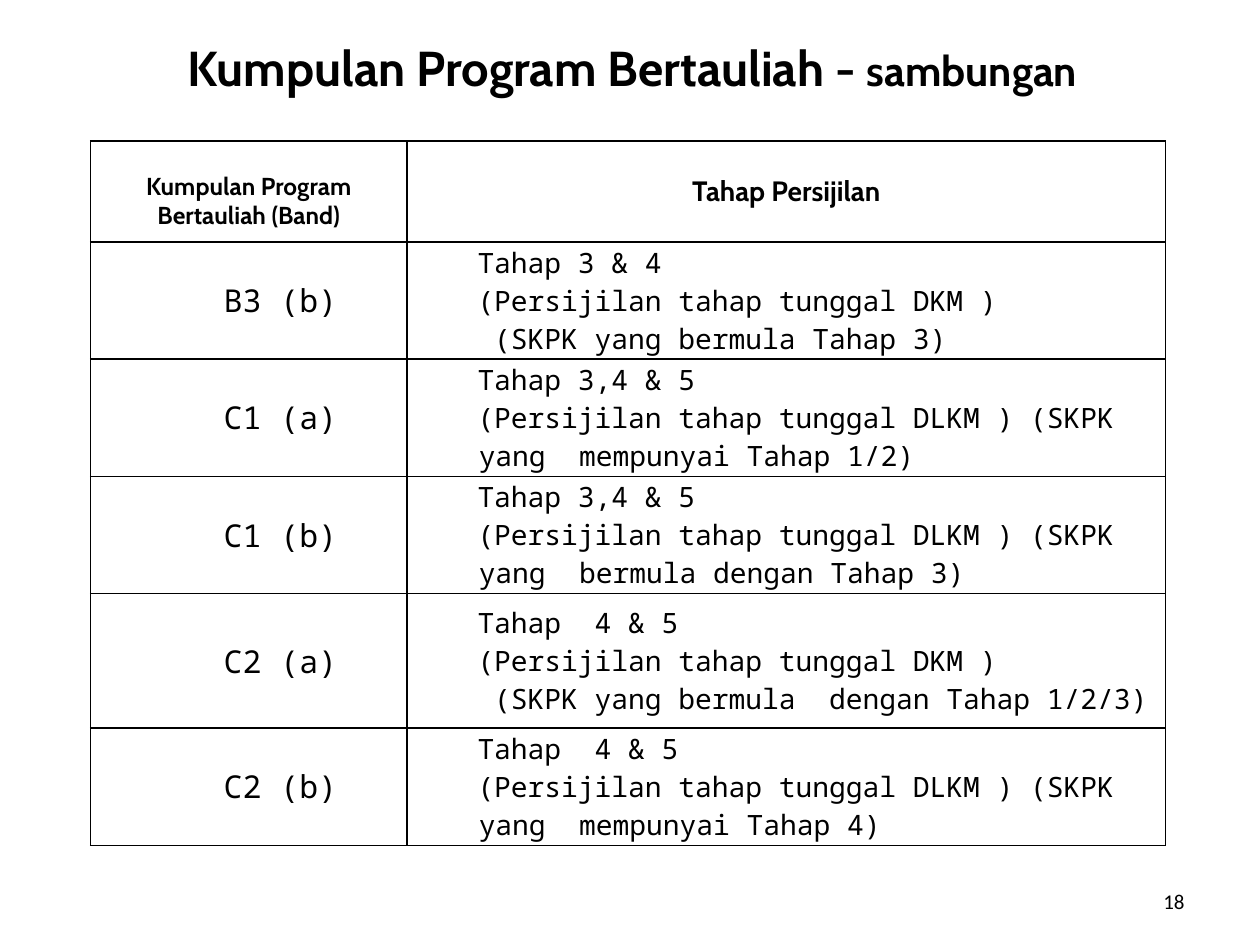
from lxml import etree
from pptx import Presentation
from pptx.dml.color import RGBColor
from pptx.enum.text import MSO_ANCHOR, PP_ALIGN
from pptx.oxml.ns import qn
from pptx.util import Inches, Pt

CENTER, LEFT, RIGHT = PP_ALIGN.CENTER, PP_ALIGN.LEFT, PP_ALIGN.RIGHT
TOP, MIDDLE = MSO_ANCHOR.TOP, MSO_ANCHOR.MIDDLE

# Content
TITLE = [("Kumpulan Program Bertauliah - ", "title"), ("sambungan", "subtitle")]
HEADERS = ["Kumpulan Program Bertauliah (Band)", "Tahap Persijilan"]
BANDS = [
    ("B3 (b)", ["Tahap 3 & 4", "(Persijilan tahap tunggal DKM )",
                " (SKPK yang bermula Tahap 3)"]),
    ("C1 (a)", ["Tahap 3,4 & 5",
                "(Persijilan tahap tunggal DLKM ) (SKPK yang  mempunyai Tahap 1/2)"]),
    ("C1 (b)", ["Tahap 3,4 & 5",
                "(Persijilan tahap tunggal DLKM ) (SKPK yang  bermula dengan Tahap 3)"]),
    ("C2 (a)", ["Tahap  4 & 5", "(Persijilan tahap tunggal DKM )",
                " (SKPK yang bermula  dengan Tahap 1/2/3)"]),
    ("C2 (b)", ["Tahap  4 & 5",
                "(Persijilan tahap tunggal DLKM ) (SKPK yang  mempunyai Tahap 4)"]),
]
PAGE = "18"

# Theme: each style is font, size, bold
THEME = {
    "ink": RGBColor(0, 0, 0),
    "paper": RGBColor(255, 255, 255),
    "title": ("Cabin", 28, True),
    "subtitle": ("Cabin", 24, True),
    "head_band": ("Cabin", 14, True),
    "head_level": ("Cabin", 16, True),
    "band": ("Noto Sans Mono", 18, False),
    "level": ("Noto Sans Mono", 16, False),
    "page": ("Calibri", 12, False),
}

# Grid, in inches
TABLE_LEFT, TABLE_TOP = 0.72, 1.12
COLS = [2.51, 6.02]
ROWS = [0.8, 0.93, 0.93, 0.93, 1.07, 0.93]
PAD, INDENT, HANG = 0.07, 0.5, -0.01
HEAD_DROP = [0.24, 0.27]


def style(r, name):
    r.font.name, size, r.font.bold = THEME[name]
    r.font.size = Pt(size)
    r.font.color.rgb = THEME["ink"]


def add_text(s, box, runs, align, anchor, wrap):
    tf = s.shapes.add_textbox(*map(Inches, box)).text_frame
    tf.word_wrap, tf.vertical_anchor = wrap, anchor
    p = tf.paragraphs[0]
    p.alignment = align
    for text, name in runs:
        r = p.add_run()
        r.text = text
        style(r, name)


def add_borders(cell):
    tcPr = cell._tc.get_or_add_tcPr()
    for side in ("a:lnL", "a:lnR", "a:lnT", "a:lnB"):
        ln = etree.SubElement(tcPr, qn(side), w=str(Pt(1)))
        fill = etree.SubElement(ln, qn("a:solidFill"))
        etree.SubElement(fill, qn("a:srgbClr"), val=str(THEME["ink"]))


def fill_cell(cell, lines, name, align, anchor=MIDDLE, drop=0, indent=0, hang=0):
    add_borders(cell)
    cell.fill.solid()
    cell.fill.fore_color.rgb = THEME["paper"]
    cell.margin_left = cell.margin_right = Inches(PAD)
    cell.margin_top, cell.margin_bottom = Inches(drop), 0
    cell.vertical_anchor = anchor
    cell.text_frame.text = "\n".join(lines)
    for p in cell.text_frame.paragraphs:
        p.alignment = align
        pPr = p._p.get_or_add_pPr()
        pPr.set("marL", str(Inches(indent)))
        pPr.set("indent", str(Inches(hang)))
        style(p.runs[0], name)


prs = Presentation()
prs.slide_width, prs.slide_height = Inches(10), Inches(7.5)
s = prs.slides.add_slide(prs.slide_layouts[6])

# Table
table = s.shapes.add_table(
    len(ROWS), len(COLS), Inches(TABLE_LEFT), Inches(TABLE_TOP),
    Inches(sum(COLS)), Inches(sum(ROWS))).table
table.first_row = table.horz_banding = False
for col, width in zip(table.columns, COLS):
    col.width = Inches(width)
for row, height in zip(table.rows, ROWS):
    row.height = Inches(height)

for c, name in enumerate(("head_band", "head_level")):
    fill_cell(table.cell(0, c), [HEADERS[c]], name, CENTER, TOP, HEAD_DROP[c])
for i, (band, levels) in enumerate(BANDS, start=1):
    fill_cell(table.cell(i, 0), [band], "band", CENTER, indent=INDENT)
    fill_cell(table.cell(i, 1), levels, "level", LEFT, indent=INDENT, hang=HANG)

# Page number and title
add_text(s, (7.17, 6.95, 2.33, 0.4), [(PAGE, "page")], RIGHT, MIDDLE, True)
add_text(s, (0.58, 0.25, 8.88, 0.57), TITLE, CENTER, TOP, False)

prs.save("out.pptx")
